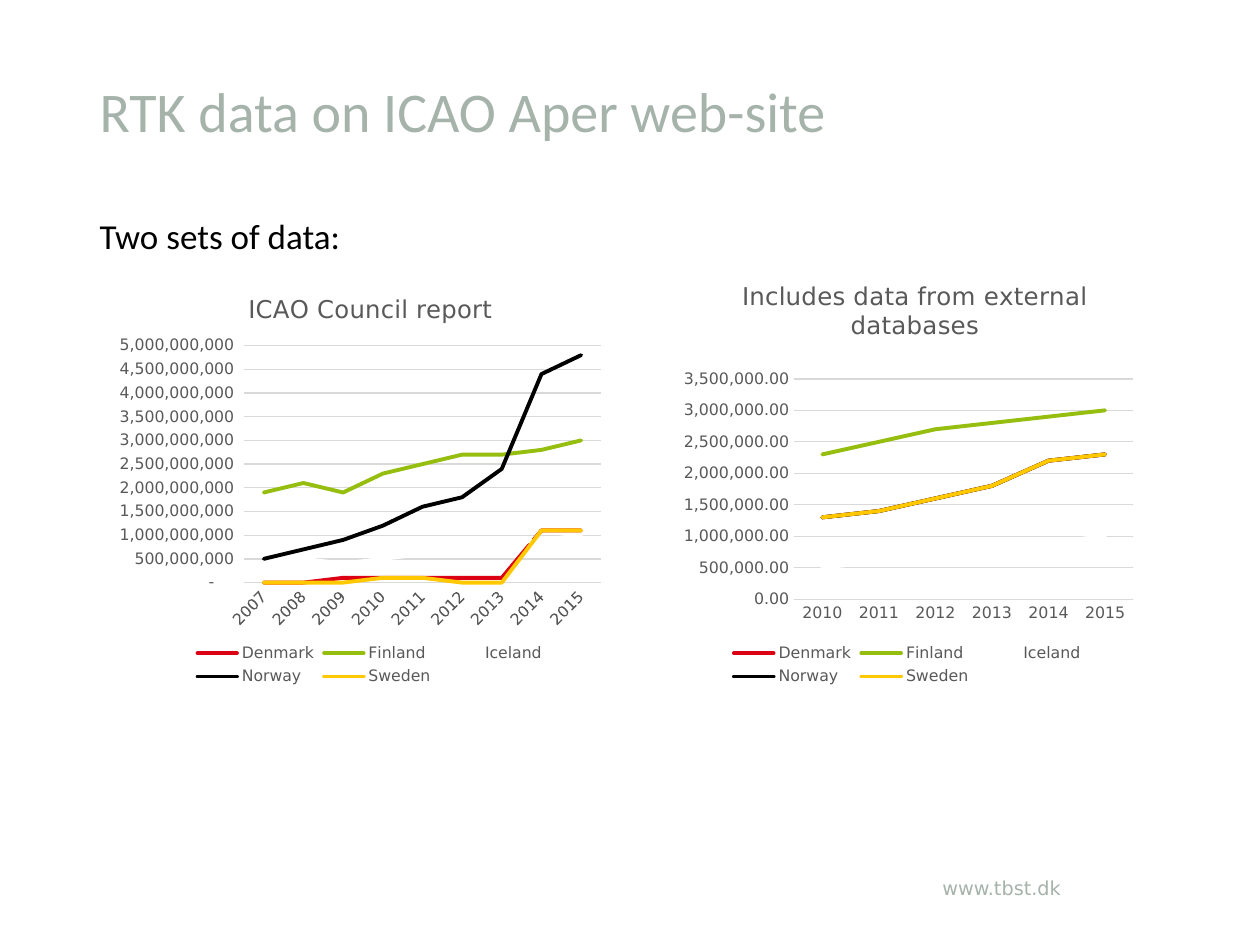
from pptx import Presentation
from pptx.chart.data import CategoryChartData as ChartData
from pptx.dml.color import RGBColor
from pptx.enum.chart import XL_CHART_TYPE as ChartType
from pptx.enum.chart import XL_LEGEND_POSITION as LegendPosition
from pptx.enum.chart import XL_MARKER_STYLE as MarkerStyle
from pptx.enum.chart import XL_TICK_MARK as TickMark
from pptx.oxml import parse_xml
from pptx.oxml.ns import nsdecls
from pptx.util import Inches, Pt

COLORS = {
    "sage": "A5B3AB", "text": "000000", "label": "595959", "grid": "D9D9D9",
    "Denmark": "DC0014", "Finland": "96BE0F", "Iceland": "FFFFFF",
    "Norway": "000000", "Sweden": "FFC800",
}
CHART_FONT = "DejaVu Sans"

presentation = Presentation()
presentation.slide_width, presentation.slide_height = Inches(10), Inches(7.5)
COLUMN = presentation.slide_width / 100
ROW = presentation.slide_height / 100

# Charts: values in the given unit, layouts as shares of the chart
COUNCIL = {
    "title": "ICAO Council report",
    "title_at": {"x": 0.25, "y": 0.03},
    "plot_at": {"x": 0.25, "y": 0.17, "w": 0.71, "h": 0.57},
    "format": '_-* #,##0_-;\\-* #,##0_-;_-* "-"??_-;_-@_',
    "label_turn": -45,
    "years": range(2007, 2016),
    "unit": 100_000_000,
    "axis": (50, 5),
    "series": {
        "Denmark": (0, 0, 1, 1, 1, 1, 1, 11, 11),
        "Finland": (19, 21, 19, 23, 25, 27, 27, 28, 30),
        "Iceland": (5, 5, 4, 5, 6, 7, 8, 9, 10),
        "Norway": (5, 7, 9, 12, 16, 18, 24, 44, 48),
        "Sweden": (0, 0, 0, 1, 1, 0, 0, 11, 11),
    },
}
SHARED = (13, 14, 16, 18, 22, 23)
EXTERNAL = {
    "title": "Includes data from external databases",
    "title_at": {"x": 0.14, "y": 0},
    "plot_at": {"x": 0.26, "y": 0.25, "w": 0.72, "h": 0.53},
    "format": "#,##0.00",
    "label_turn": 0,
    "years": range(2010, 2016),
    "unit": 100_000,
    "axis": (35, 5),
    "series": {
        "Denmark": SHARED,
        "Finland": (23, 25, 27, 28, 29, 30),
        "Iceland": (5, 6, 7, 8, 9, 10),
        "Norway": SHARED,
        "Sweden": SHARED,
    },
}


def place(left, top, width, height):
    """Turn grid columns and rows into slide lengths."""
    return [round(n * step) for n, step in
            zip((left, top, width, height), (COLUMN, ROW, COLUMN, ROW))]


def set_font(font, size, color, name=CHART_FONT):
    for key, value in {"size": Pt(size), "name": name, "bold": False}.items():
        setattr(font, key, value)
    font.color.rgb = RGBColor.from_string(COLORS[color])


def set_line(line, color, width):
    line.color.rgb = RGBColor.from_string(COLORS[color])
    line.width = Pt(width)


def add_text(slide, box, text, font, margins=(0, 0), spacing=None):
    frame = slide.shapes.add_textbox(*place(*box)).text_frame
    side, end = (Inches(margin) for margin in margins)
    for key, value in {"word_wrap": True, "margin_left": side, "margin_right": side,
                       "margin_top": end, "margin_bottom": end}.items():
        setattr(frame, key, value)
    paragraph = frame.paragraphs[0]
    paragraph.line_spacing = spacing
    run = paragraph.add_run()
    run.text = text
    set_font(run.font, *font)


def set_layout(element, shares, inner=False):
    """Fix the place of a chart title or plot area."""
    for old in element.findall("{*}layout"):
        element.remove(old)
    target = '<c:layoutTarget val="inner"/>' if inner else ""
    modes = "".join(f'<c:{key}Mode val="edge"/>' for key in "xy")
    sizes = "".join(f'<c:{key} val="{value}"/>' for key, value in shares.items())
    layout = parse_xml(f'<c:layout {nsdecls("c")}><c:manualLayout>'
                       f'{target}{modes}{sizes}</c:manualLayout></c:layout>')
    element.insert(0 if inner else 1, layout)


def add_line_chart(slide, box, content):
    data = ChartData()
    data.categories = [str(year) for year in content["years"]]
    for name, values in content["series"].items():
        data.add_series(name, [value * content["unit"] for value in values])
    chart = slide.shapes.add_chart(ChartType.LINE, *place(*box), data).chart
    set_font(chart.font, 10, "text")

    # Title and plot area
    frame = chart.chart_title.text_frame
    frame.text = content["title"]
    set_font(frame.paragraphs[0].runs[0].font, 14, "label")
    chart.chart_title.include_in_layout = False
    set_layout(frame._txBody.getparent().getparent(), content["title_at"])
    set_layout(chart.plots[0]._element.getparent(), content["plot_at"], inner=True)

    # Axes
    years, amounts = chart.category_axis, chart.value_axis
    for axis in (years, amounts):
        axis.major_tick_mark = axis.minor_tick_mark = TickMark.NONE
        set_font(axis.tick_labels.font, 9, "label")
    set_line(years.format.line, "grid", 0.75)
    if content["label_turn"]:
        body = years._element.find("{*}txPr/{*}bodyPr")
        body.set("rot", str(content["label_turn"] * 60000))
    amounts.format.line.fill.background()
    set_line(amounts.major_gridlines.format.line, "grid", 0.75)
    top, step = (value * content["unit"] for value in content["axis"])
    for key, value in {"minimum_scale": 0, "maximum_scale": top, "major_unit": step}.items():
        setattr(amounts, key, value)
    amounts.tick_labels.number_format = content["format"]
    amounts.tick_labels.number_format_is_linked = False

    # Legend and lines
    chart.has_legend = True
    chart.legend.position = LegendPosition.BOTTOM
    chart.legend.include_in_layout = False
    set_font(chart.legend.font, 9, "label")
    chart.plots[0].vary_by_categories = False
    for series in chart.plots[0].series:
        series.smooth = False
        series.marker.style = MarkerStyle.NONE
        set_line(series.format.line, series.name, 2.25)
        series.format.line._get_or_add_ln().set("cap", "rnd")


def add_data_slide():
    slide = presentation.slides.add_slide(presentation.slide_layouts[6])
    # Heading, lead-in and footer
    add_text(slide, (7.9, 7.9, 86.2, 13), "RTK data on ICAO Aper web-site",
             (32, "sage", "Calibri"), (0, 0.08), Pt(34))
    add_text(slide, (7.9, 22.7, 86.2, 6), "Two sets of data:", (20, "text", "Calibri"))
    add_text(slide, (73.8, 92.1, 20.5, 3.9), "www.tbst.dk", (11, "sage"), (0.1, 0.05))
    # Charts side by side
    add_line_chart(slide, (53.3, 29.1, 37.4, 44), EXTERNAL)
    add_line_chart(slide, (9.1, 29.1, 40.2, 44), COUNCIL)


if __name__ == "__main__":
    add_data_slide()
    presentation.save("out.pptx")
